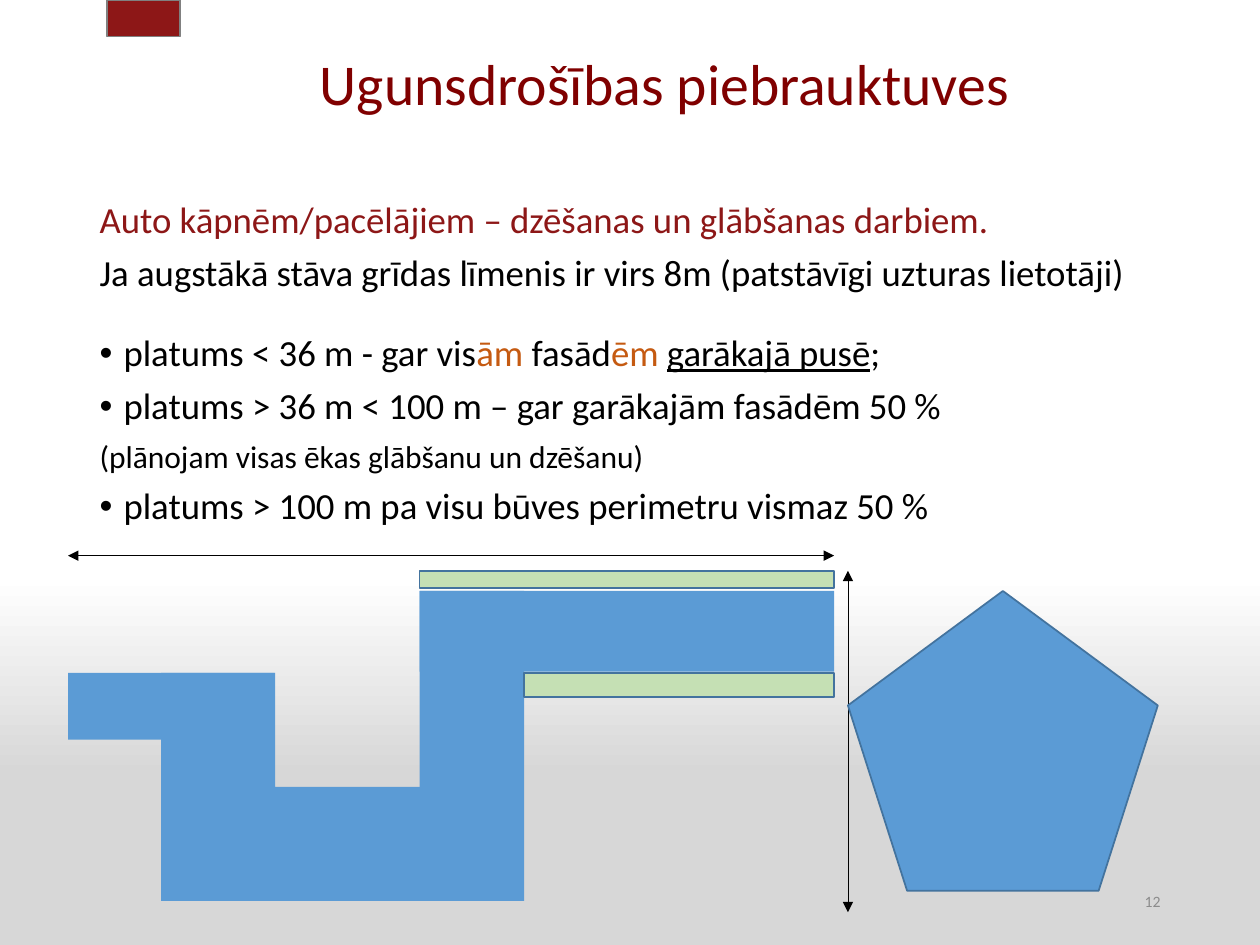
from lxml.etree import SubElement as Sub
from pptx import Presentation
from pptx.dml.color import RGBColor as Rgb
from pptx.enum.shapes import MSO_CONNECTOR as Conn, MSO_SHAPE as Form
from pptx.enum.text import MSO_ANCHOR as Anchor, MSO_AUTO_SIZE as Fit, PP_ALIGN as Align
from pptx.oxml.ns import qn
from pptx.util import Inches, Pt

COLS, ROWS = 100, 75  # grid of square cells over the slide
WIDE, HIGH = Inches(10), Inches(7.5)
HUES = {
    "title": "800000", "red": "8D1717", "text": "000000", "accent": "C55A11",
    "number": "8C8C8C", "edge": "808080", "blue": "5B9BD5",
    "outline": "43739E", "green": "C5E0B4",
}
SHADES = [(0, "FFFFFF"), (61, "FFFFFF"), (82, "D7D7D7"), (100, "D9D9D9")]
HANG = Inches(0.19)

# Edges that the building, its access strips and the arrows share
LEFT, INNER, RIGHT = 5.4, 33.3, 66.2
TOP, FLOOR = 46.9, 71.5
WING = 8.3  # width of the upright part

# Each line: runs of (text, format), then paragraph format
LINES = [
    ([("Auto kāpnēm/pacēlājiem – dzēšanas un glābšanas darbiem.", {"hue": "red"})],
     {"before": 0}),
    ([("Ja augstākā stāva grīdas līmenis ir virs 8m (patstāvīgi uzturas lietotāji)", {})], {}),
    ([("platums < 36 m - gar vis", {}), ("ām", {"hue": "accent"}), (" fasād", {}),
      ("ēm ", {"hue": "accent"}), ("garākajā pusē", {"under": True}), (";", {})],
     {"before": 23.5, "bullet": True}),
    ([("platums > 36 m < 100 m – gar garākajām fasādēm 50 %", {})], {"bullet": True}),
    ([("(plānojam visas ēkas glābšanu un dzēšanu)", {"size": 18})], {}),
    ([("platums > 100 m pa visu būves perimetru vismaz 50 %", {})], {"bullet": True}),
]


def color(name):
    return Rgb.from_string(HUES[name])


def grid(x, y, w, h):
    return [int(WIDE * x / COLS), int(HIGH * y / ROWS),
            int(WIDE * w / COLS), int(HIGH * h / ROWS)]


def place(shape, *cells):
    shape.left, shape.top, shape.width, shape.height = grid(*cells)


def write(para, text, size=21, hue="text", under=False):
    run = para.add_run()
    run.text = text
    font = run.font
    font.name, font.size, font.underline = "Calibri", Pt(size), under
    font.color.rgb = color(hue)


def style(para, before=7.5, bullet=False):
    para.line_spacing = 0.9
    para.space_before = Pt(before)
    props = para._p.get_or_add_pPr()
    props.set("marL", str(HANG if bullet else 0))
    props.set("indent", str(-HANG if bullet else 0))
    if bullet:
        Sub(props, qn("a:buFont"), typeface="Arial")
        Sub(props, qn("a:buChar"), char="•")
    else:
        Sub(props, qn("a:buNone"))


def block(shapes, form, cells, fill, line=None):
    shape = shapes.add_shape(form, *grid(*cells))
    shape.shadow.inherit = False
    shape.fill.solid()
    shape.fill.fore_color.rgb = color(fill)
    if line:
        shape.line.color.rgb = color(line)
        shape.line.width = Pt(1)
    else:
        shape.line.fill.background()


def arrow(shapes, x1, y1, x2, y2):
    link = shapes.add_connector(Conn.STRAIGHT, *grid(x1, y1, x2, y2))
    link.line.color.rgb = color("text")
    link.line.width = Pt(0.5)
    line = link.line._get_or_add_ln()
    for end in ("a:headEnd", "a:tailEnd"):
        Sub(line, qn(end), type="triangle")
    Sub(link._element.spPr, qn("a:effectLst"))


def shade(slide):
    fill = slide.background.fill
    fill.gradient()
    fill.gradient_angle = 270
    stops = next(slide._element.iter(qn("a:gsLst")))
    for stop in list(stops):
        stops.remove(stop)
    for share, tone in SHADES:
        stop = Sub(stops, qn("a:gs"), pos=str(share * 1000))
        Sub(stop, qn("a:srgbClr"), val=tone)


def heading(slide):
    title = slide.shapes.title
    place(title, 13.7, 3.5, 78.1, 6.7)
    frame = title.text_frame
    frame.auto_size = Fit.NONE
    frame.vertical_anchor = Anchor.MIDDLE
    para = frame.paragraphs[0]
    para.alignment = Align.CENTER
    para.line_spacing = 0.9
    write(para, "Ugunsdrošības piebrauktuves", size=33, hue="title")


def rules(slide):
    body = slide.placeholders[1]
    place(body, 6.9, 15.5, 86.2, 56.8)
    frame = body.text_frame
    frame.auto_size = Fit.NONE
    for i, (runs, look) in enumerate(LINES):
        para = frame.add_paragraph() if i else frame.paragraphs[0]
        style(para, **look)
        for text, form in runs:
            write(para, text, **form)


def number(slide):
    frame = slide.shapes.add_textbox(*grid(70.6, 69.5, 22.5, 4)).text_frame
    frame.word_wrap = True
    frame.vertical_anchor = Anchor.MIDDLE
    para = frame.paragraphs[0]
    para.alignment = Align.RIGHT
    write(para, "12", size=9, hue="number")


def plan(shapes):
    # Size arrows
    arrow(shapes, LEFT, 44.1, RIGHT, 44.1)
    arrow(shapes, 67.3, 45.3, 67.3, 72.4)
    # Building with wings
    house = shapes.add_group_shape().shapes
    block(house, Form.CORNER, (12.8, 53.4, 28.7, 18.1), "blue")
    for cells in ((INNER, TOP, WING, FLOOR - TOP),
                  (INNER, TOP, RIGHT - INNER, 6.4),
                  (LEFT, 53.4, 16.4, 5.3)):
        block(house, Form.RECTANGLE, cells, "blue")
    # Second building
    block(shapes, Form.REGULAR_PENTAGON, (67.3, TOP, 24.6, 23.8), "blue", "outline")
    # Access strips along the facades
    for x, y, h in ((INNER + WING, 53.4, 1.9), (INNER, 45.3, 1.4)):
        block(shapes, Form.RECTANGLE, (x, y, RIGHT - x, h), "green", "outline")


def main():
    deck = Presentation()
    deck.slide_width, deck.slide_height = WIDE, HIGH
    slide = deck.slides.add_slide(deck.slide_layouts[1])
    shade(slide)
    heading(slide)
    rules(slide)
    number(slide)
    # Tab at the top edge
    block(slide.shapes, Form.RECTANGLE, (8.5, 0, 5.8, 2.9), "red", "edge")
    plan(slide.shapes)
    deck.save("out.pptx")


if __name__ == "__main__":
    main()
